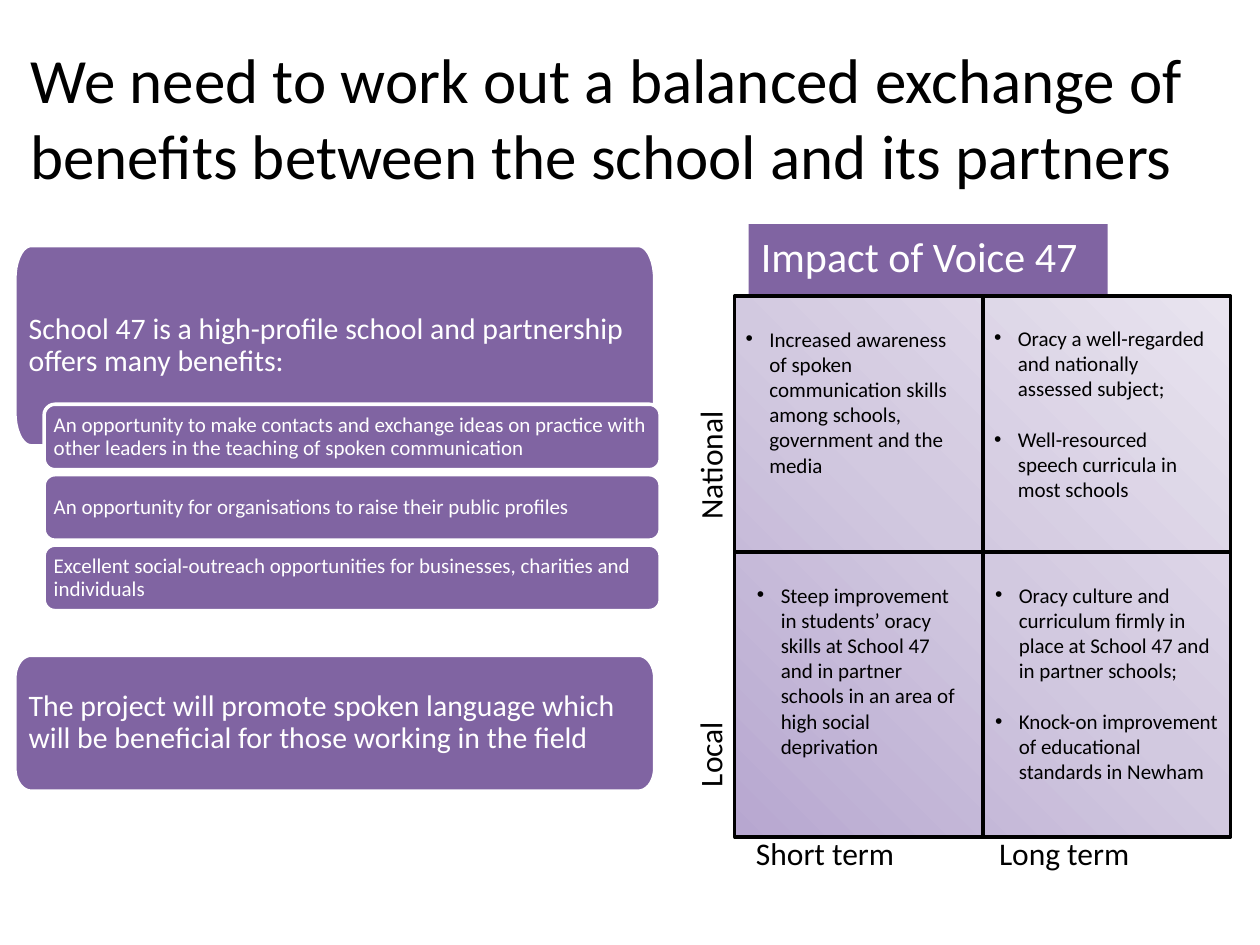
"""Build the slide on the exchange of benefits between a school and its partners."""
from copy import deepcopy
from math import cos, pi, sin

from lxml import etree
from pptx import Presentation
from pptx.dml.color import RGBColor
from pptx.enum import shapes, text
from pptx.oxml import ns
from pptx.util import Cm, Pt

BLACK = RGBColor(0, 0, 0)
WHITE = RGBColor(0xFF, 0xFF, 0xFF)
PURPLE = RGBColor(0x80, 0x64, 0xA2)
SHADES = [RGBColor(0xB7, 0xA7, 0xD0), RGBColor(0xD2, 0xC9, 0xE0), RGBColor(0xE9, 0xE4, 0xEF)]

PANELS = [
    (4.95, 4.04, "School 47 is a high-profile school and partnership offers many benefits:"),
    (13.21, 2.74, "The project will promote spoken language which will be beneficial "
                  "for those working in the field"),
]
OFFERS = [
    "An opportunity to make contacts and exchange ideas on practice with other leaders "
    "in the teaching of spoken communication",
    "An opportunity for organisations to raise their public profiles",
    "Excellent social-outreach opportunities for businesses, charities and individuals",
]
LABELS = [
    (14.99, 16.69, 3.6, 0, "Short term"),
    (19.89, 16.69, 3.3, 0, "Long term"),
    (12.65, 13.94, 3.33, 270, "Local"),
    (11.63, 7.52, 5.38, 270, "National"),
]
CELLS = [
    (14.78, 6.45, 4.8, ["Increased awareness of spoken communication skills among schools, "
                        "government and the media"]),
    (19.79, 6.43, 4.85, ["Oracy a well-regarded and nationally assessed subject;",
                         "Well-resourced speech curricula in most schools"]),
    (15.01, 11.61, 4.7, ["Steep improvement in students’ oracy skills at School 47 and in "
                         "partner schools in an area of high social deprivation"]),
    (19.81, 11.61, 5.11, ["Oracy culture and curriculum firmly in place at School 47 and in "
                          "partner schools;",
                          "Knock-on improvement of educational standards in Newham"]),
]


def write(shape, lines, size, color):
    """Fill a shape with left-aligned paragraphs."""
    frame = shape.text_frame
    frame.text = "\n".join(lines)
    frame.word_wrap = True
    for par in frame.paragraphs:
        par.alignment = text.PP_ALIGN.LEFT
        for run in par.runs:
            run.font.name = "Calibri"
            run.font.size = Pt(size)
            run.font.color.rgb = color
    return frame


def paint(shape, line=None):
    """Give a shape the flat purple fill and an optional outline."""
    shape.shadow.inherit = False
    shape.fill.solid()
    shape.fill.fore_color.rgb = PURPLE
    if line is None:
        shape.line.fill.background()
    else:
        shape.line.color.rgb = line
        shape.line.width = Pt(2)


def pack(frame, inset):
    """Centre text vertically with equal insets and tight lines."""
    frame.vertical_anchor = text.MSO_ANCHOR.MIDDLE
    frame.margin_left = frame.margin_right = Cm(inset)
    frame.margin_top = frame.margin_bottom = Cm(inset)
    frame.paragraphs[0].line_spacing = 0.9


def panel(slide, top, high, words):
    """Draw a large panel with elliptical corners."""
    left, wide = 0.3, 12.9
    rx, ry = 0.33, high / 6
    corners = [(left + wide - rx, top + ry, -90), (left + wide - rx, top + high - ry, 0),
               (left + rx, top + high - ry, 90), (left + rx, top + ry, 180)]
    dots = []
    for x, y, start in corners:
        for step in range(0, 91, 10):
            turn = (start + step) * pi / 180
            dots.append((Cm(x + rx * cos(turn)), Cm(y + ry * sin(turn))))
    form = slide.shapes.build_freeform(*dots[0])
    form.add_line_segments(dots[1:], close=True)
    shape = form.convert_to_shape()
    paint(shape, WHITE)
    pack(write(shape, [words], 17, WHITE), 0.28)


def offer(slide, top, words):
    """Draw a small rounded bar."""
    kind = shapes.MSO_SHAPE.ROUNDED_RECTANGLE
    bar = slide.shapes.add_shape(kind, Cm(0.89), Cm(top), Cm(12.42), Cm(1.32))
    paint(bar, WHITE)
    pack(write(bar, [words], 12, WHITE), 0.13)


def banner(slide):
    """Draw the heading over the grid."""
    box = slide.shapes.add_shape(shapes.MSO_SHAPE.RECTANGLE, Cm(15.09), Cm(4.52), Cm(7.24), Cm(1.73))
    paint(box)
    frame = write(box, ["Impact of Voice 47"], 24, WHITE)
    frame.vertical_anchor = text.MSO_ANCHOR.TOP


def rule(slide, x1, y1, x2, y2):
    """Draw a black dividing line."""
    line = slide.shapes.add_connector(shapes.MSO_CONNECTOR.STRAIGHT, Cm(x1), Cm(y1), Cm(x2), Cm(y2))
    line.line.color.rgb = BLACK
    line.line.width = Pt(2.25)
    etree.SubElement(line._element.spPr, ns.qn("a:effectLst"))
    return line


def grid(slide):
    """Draw the shaded square and its two dividers."""
    left, top, wide, high = 14.81, 5.97, 10, 10.9
    box = slide.shapes.add_shape(shapes.MSO_SHAPE.RECTANGLE, Cm(left), Cm(top), Cm(wide), Cm(high))
    paint(box, BLACK)
    box.fill.gradient()
    box.fill.gradient_angle = 45
    stops = box._element.spPr.find(".//" + ns.qn("a:gsLst"))
    stops.insert(1, deepcopy(stops[0]))
    for stop, place, shade in zip(box.fill.gradient_stops, (0, 0.5, 1), SHADES):
        stop.position = place
        stop.color.rgb = shade
    mid = left + wide / 2
    post = rule(slide, mid, top, mid, top + high)
    post.begin_connect(box, 0)
    post.end_connect(box, 2)
    rule(slide, left, 11.13, left + wide, 11.13)


def label(slide, left, top, wide, turn, words):
    """Add an axis label."""
    box = slide.shapes.add_textbox(Cm(left), Cm(top), Cm(wide), Cm(1.02))
    box.rotation = turn
    write(box, [words], 18, BLACK)


def cell(slide, left, top, wide, points):
    """Add the bullet points of one quarter of the grid."""
    box = slide.shapes.add_textbox(Cm(left), Cm(top), Cm(wide), Cm(3.96))
    frame = write(box, points, 12, BLACK)
    for num, par in enumerate(frame.paragraphs):
        if num:
            par.space_before = Pt(14.6)
        props = par._p.get_or_add_pPr()
        props.set("marL", str(Cm(0.48)))
        props.set("indent", str(-Cm(0.48)))
        etree.SubElement(props, ns.qn("a:buFont"), typeface="Arial")
        etree.SubElement(props, ns.qn("a:buChar"), char="•")


def main():
    """Build and save the slide."""
    deck = Presentation()
    deck.slide_width, deck.slide_height = Cm(25.4), Cm(19.05)
    slide = deck.slides.add_slide(deck.slide_layouts[5])
    title = slide.shapes.title
    title.left, title.top, title.width, title.height = Cm(0.36), Cm(0.76), Cm(25.15), Cm(3.18)
    write(title, ["We need to work out a balanced exchange of benefits between "
                  "the school and its partners"], 36, BLACK)
    for item in PANELS:
        panel(slide, *item)
    banner(slide)
    grid(slide)
    for item in LABELS:
        label(slide, *item)
    for item in CELLS:
        cell(slide, *item)
    for num, words in enumerate(OFFERS):
        offer(slide, 8.15 + 1.42 * num, words)
    deck.save("out.pptx")


if __name__ == "__main__":
    main()
